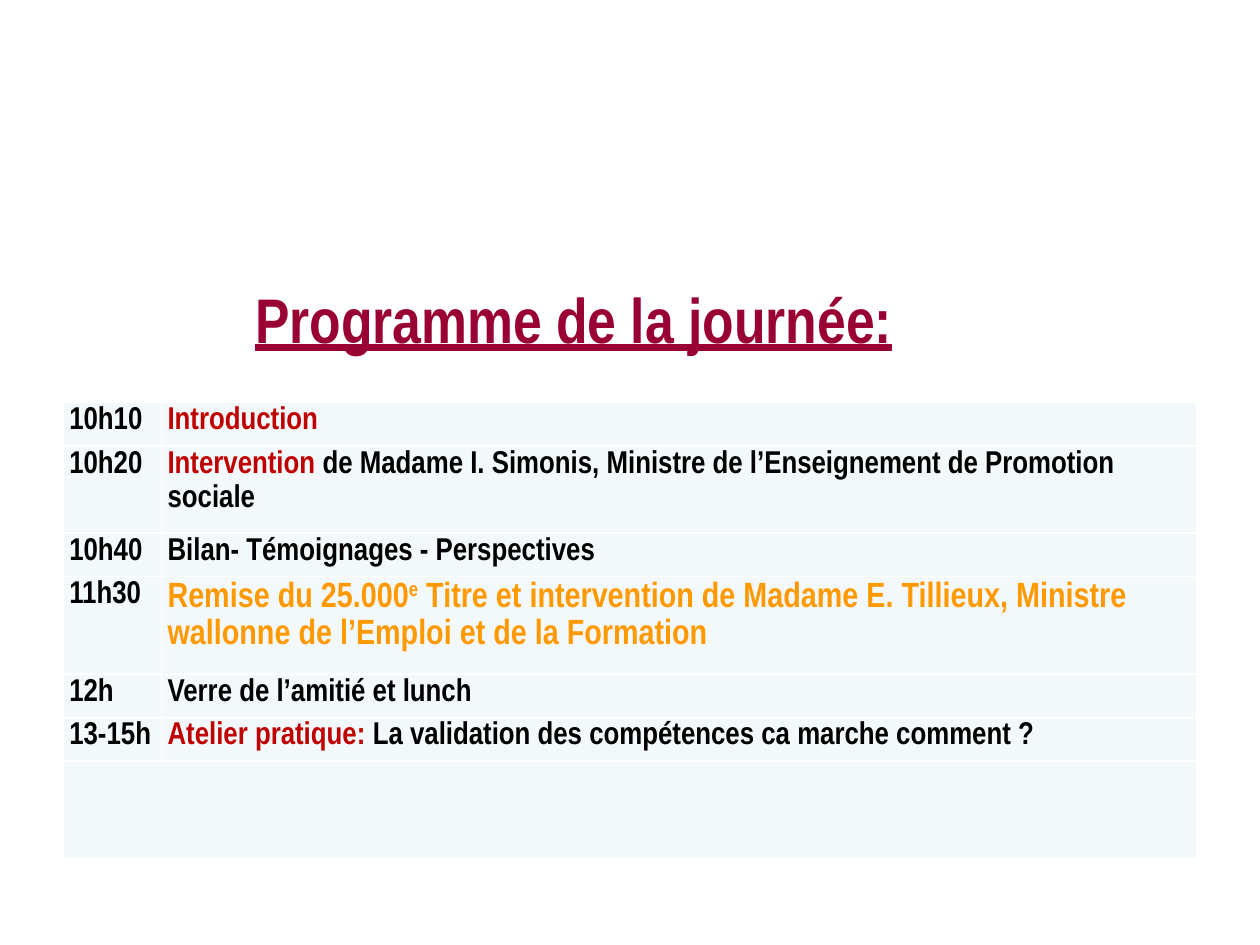
from lxml.etree import SubElement
from pptx import Presentation
from pptx.dml.color import RGBColor
from pptx.enum.text import PP_ALIGN
from pptx.oxml.ns import qn
from pptx.util import Inches, Pt

HUES = {"title": "990033", "ink": "000000", "red": "C00000",
        "gold": "FF9900", "cell": "F3F9FA", "line": "FFFFFF"}
AGENDA = [
    ("10h10", [("Introduction", "red")], 4.5),
    ("10h20", [("Intervention ", "red"),
               ("de Madame I. Simonis, Ministre de l’Enseignement de Promotion sociale", "ink")], 9.2),
    ("10h40", [("Bilan- Témoignages - Perspectives", "ink")], 4.5),
    ("11h30", [("Remise du 25.000", "gold"), ("e", "gold", 30),
               (" Titre et intervention de Madame E. Tillieux, Ministre "
                "wallonne de l’Emploi et de la Formation", "gold")], 10.3),
    ("12h", [("Verre de l’amitié et lunch", "ink")], 4.5),
    ("13-15h", [("Atelier pratique: ", "red"),
                ("La validation des compétences ca marche comment ?", "ink")], 4.6),
]
LAST = 10.4


class Page:
    def __init__(self, deck):
        self.deck = deck
        self.slide = deck.slides.add_slide(deck.slide_layouts[6])
        self.base = {"name": "Arial Narrow", "bold": True}

    def wide(self, share):
        return round(self.deck.slide_width * share / 100)

    def high(self, share):
        return round(self.deck.slide_height * share / 100)

    def area(self, left, top, width, height):
        return self.wide(left), self.high(top), self.wide(width), self.high(height)

    def words(self, para, text, hue, lift=0, **style):
        run = para.add_run()
        run.text = text
        for key, value in {**self.base, **style}.items():
            setattr(run.font, key, value)
        run.font.color.rgb = RGBColor.from_string(HUES[hue])
        if lift:
            run.font._element.set("baseline", str(lift * 1000))

    def title(self, text, area):
        frame = self.slide.shapes.add_textbox(*self.area(*area)).text_frame
        frame.word_wrap = True
        para = frame.paragraphs[0]
        para.alignment = PP_ALIGN.CENTER
        self.words(para, text, "title", size=Pt(36), underline=True)

    def edge(self, cell):
        props = cell._tc.get_or_add_tcPr()
        for rank, side in enumerate(("lnL", "lnR", "lnT", "lnB")):
            line = props.makeelement(qn(f"a:{side}"), {"w": str(Pt(1))})
            props.insert(rank, line)
            fill = SubElement(line, qn("a:solidFill"))
            SubElement(fill, qn("a:srgbClr"), val=HUES["line"])

    def dress(self, cell):
        margins = {"margin_left": Inches(0.05), "margin_right": Inches(0.05),
                   "margin_top": 0, "margin_bottom": 0}
        for key, value in margins.items():
            setattr(cell, key, value)
        cell.fill.solid()
        cell.fill.fore_color.rgb = RGBColor.from_string(HUES["cell"])
        self.edge(cell)

    def fill(self, cell, parts):
        para = cell.text_frame.paragraphs[0]
        para.line_spacing = 1.15
        for text, hue, *lift in parts:
            self.words(para, text, hue, *lift, size=Pt(20 if hue == "gold" else 18))

    def table(self, agenda, last, left, top, cols):
        rows = [item[2] for item in agenda] + [last]
        area = self.area(left, top, sum(cols), sum(rows))
        table = self.slide.shapes.add_table(len(rows), len(cols), *area).table
        table.first_row = table.horz_banding = False
        for col, share in zip(table.columns, cols):
            col.width = self.wide(share)
        for row, share in zip(table.rows, rows):
            row.height = self.high(share)
        for cell in table.iter_cells():
            self.dress(cell)
        for row, (hour, parts, _) in enumerate(agenda):
            self.fill(table.cell(row, 0), [(hour, "ink")])
            self.fill(table.cell(row, 1), parts)
        end = len(agenda)
        table.cell(end, 0).merge(table.cell(end, 1))


def main():
    deck = Presentation()
    deck.slide_width, deck.slide_height = Inches(10), Inches(7.5)
    page = Page(deck)
    page.title("Programme de la journée:", (4.2, 29.07, 82.7, 14.8))
    page.table(AGENDA, LAST, 5, 42.6, (7.8, 82.2))
    deck.save("out.pptx")


if __name__ == "__main__":
    main()
